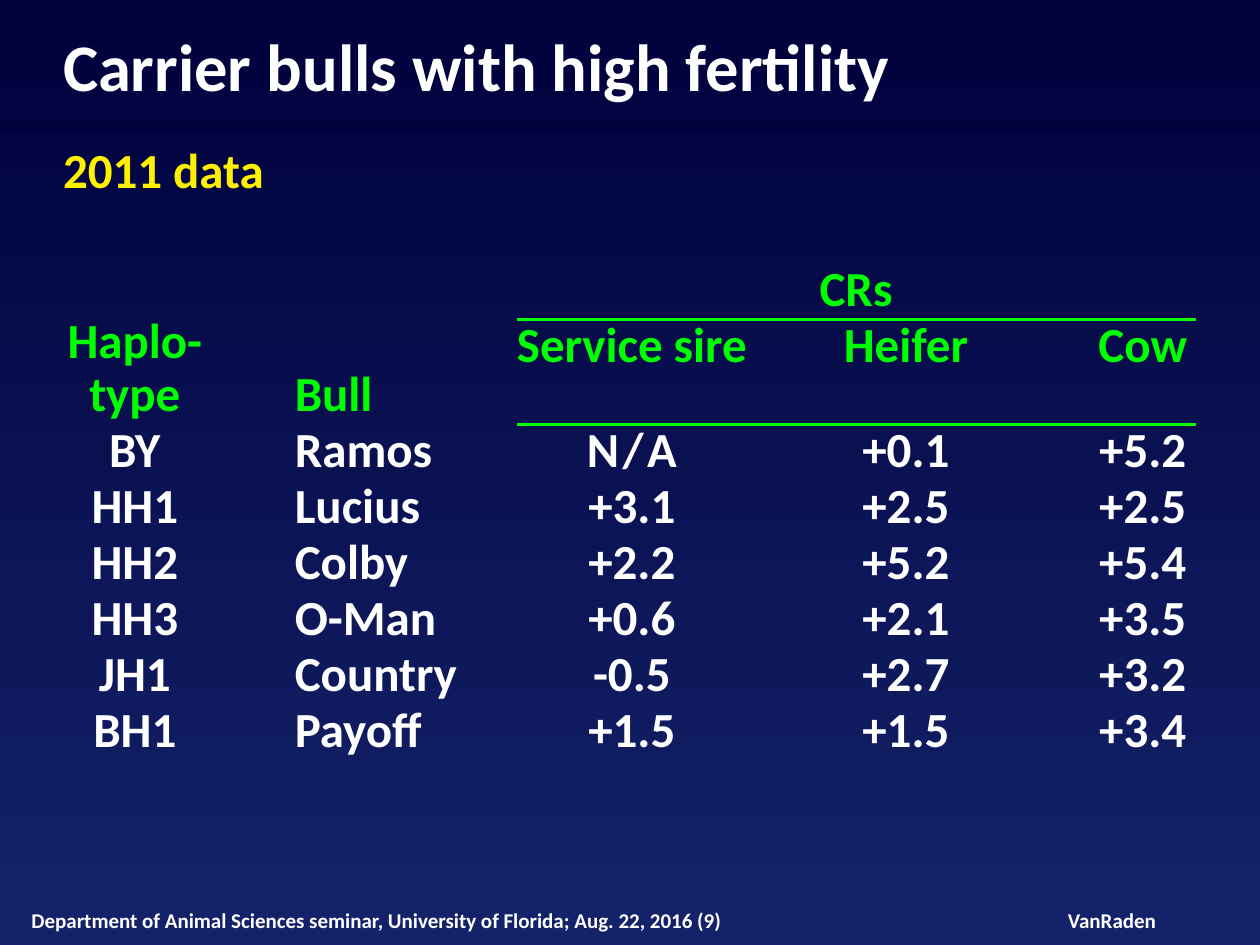
from lxml.etree import SubElement
from pptx import Presentation
from pptx.dml.color import RGBColor
from pptx.enum.text import MSO_ANCHOR, PP_ALIGN
from pptx.oxml import parse_xml
from pptx.oxml.ns import nsdecls, qn
from pptx.util import Inches, Pt

WHITE, GREEN, YELLOW, NAVY, BLUE = "FFFFFF", "00FF00", "FFF000", "00003C", "142369"
NO_GRID = "{2D5ABB26-0587-4C30-8999-92F81FD0307C}"
TITLE = [("Carrier bulls with high fertility", 38, WHITE, 0), ("2011 data", 28, YELLOW, 19.5)]
FOOTERS = [
    ("Department of Animal Sciences seminar, University of Florida; Aug. 22, 2016 (9)",
     0.25, 6.17, PP_ALIGN.LEFT, True),
    ("VanRaden", 8.47, 0.71, PP_ALIGN.CENTER, False),
]
HEADERS = [
    ["Haplo-\ntype", "Bull", "CRs", "", ""],
    ["", "", "Service sire", "Heifer", "Cow"],
]
BULLS = [
    ["BY", "Ramos", "N/A", "+0.1", "+5.2"],
    ["HH1", "Lucius", "+3.1", "+2.5", "+2.5"],
    ["HH2", "Colby", "+2.2", "+5.2", "+5.4"],
    ["HH3", "O-Man", "+0.6", "+2.1", "+3.5"],
    ["JH1", "Country", "-0.5", "+2.7", "+3.2"],
    ["BH1", "Payoff", "+1.5", "+1.5", "+3.4"],
]
COLS = [1.14, 2.46, 1.83, 2.72, 0.84]
BULL_COL, FIRST_CR, HEIFER_COL = 1, 2, 3


def rgb(color):
    """Turn a hex string into a colour."""
    return RGBColor.from_string(color)


def style(p, size, color, align=PP_ALIGN.LEFT):
    """Set the font and alignment of a paragraph."""
    p.alignment = align
    p.font.name, p.font.size, p.font.bold = "Calibri", Pt(size), True
    p.font.color.rgb = rgb(color)


def frame(tf, anchor, wrap=True):
    """Remove the insets of a text frame and anchor it."""
    tf.margin_left = tf.margin_right = tf.margin_top = tf.margin_bottom = 0
    tf.vertical_anchor, tf.word_wrap = anchor, wrap


def add_title(s):
    """Fill the title placeholder with the title and its subtitle."""
    sp = s.shapes.title
    sp.left, sp.top, sp.width, sp.height = map(Inches, (0.5, 0.2, 9, 1.38))
    tf = sp.text_frame
    frame(tf, MSO_ANCHOR.TOP)
    tf.text = "\n".join(text for text, *_ in TITLE)
    for p, (_, size, color, gap) in zip(tf.paragraphs, TITLE):
        style(p, size, color)
        p.space_before = Pt(gap)


def add_band(s):
    """Draw the dark line below the title."""
    line = s.shapes.add_connector(1, 0, Inches(1), Inches(10), Inches(1))
    line.line.color.rgb = rgb(NAVY)
    line.line.width = Pt(6.5)
    SubElement(line._element.spPr, qn("a:effectLst"))


def add_footer(s, text, left, width, align, wrap):
    """Add one footer text."""
    sp = s.shapes.add_textbox(Inches(left), Inches(7.2), Inches(width), Inches(0.2))
    frame(sp.text_frame, MSO_ANCHOR.MIDDLE, wrap)
    p = sp.text_frame.paragraphs[0]
    p.text = text
    style(p, 12, WHITE, align)


def add_rule(cell, side):
    """Draw a green border on one side of a cell."""
    cell._tc.get_or_add_tcPr().insert(0, parse_xml(
        f'<a:{side} {nsdecls("a")} w="28575"><a:solidFill>'
        f'<a:srgbClr val="{GREEN}"/></a:solidFill></a:{side}>'))


def fill_cell(cell, text, row, col):
    """Write and format one table cell."""
    header = row < len(HEADERS)
    tall = header and col < FIRST_CR
    cell.fill.background()
    cell.margin_top = cell.margin_bottom = 0
    cell.margin_left = Inches(0.7 if col == BULL_COL else 0)
    cell.margin_right = Inches(0.2 if col == HEIFER_COL and row else 0)
    cell.vertical_anchor = MSO_ANCHOR.BOTTOM if tall else MSO_ANCHOR.TOP
    cell.text = text
    for p in cell.text_frame.paragraphs:
        style(p, 28, GREEN if header else WHITE,
              PP_ALIGN.LEFT if col == BULL_COL else PP_ALIGN.CENTER)
        p.line_spacing = Pt(30 if tall else 32)
    if text == "N/A":
        p = cell.text_frame.paragraphs[0]
        p.runs[0].text = "N/"
        p.runs[0].font._element.set("spc", "200")
        p.add_run().text = "A"
    if header and not tall:
        add_rule(cell, "lnT" if row else "lnB")


def add_bulls(s):
    """Add the table of bulls and conception rates."""
    rows = HEADERS + BULLS
    table = s.shapes.add_table(len(rows), len(COLS), Inches(0.5), Inches(2.09),
                               Inches(sum(COLS)), Inches(0.44 * len(rows))).table
    table.first_row = table.horz_banding = False
    table._tbl.tblPr.find(qn("a:tableStyleId")).text = NO_GRID
    for column, width in zip(table.columns, COLS):
        column.width = Inches(width)
    for i, row in enumerate(rows):
        for j, text in enumerate(row):
            fill_cell(table.cell(i, j), text, i, j)
    for j in range(FIRST_CR):
        table.cell(0, j).merge(table.cell(1, j))
    table.cell(0, FIRST_CR).merge(table.cell(0, len(COLS) - 1))


def main():
    """Build the slide and save it."""
    prs = Presentation()
    prs.slide_width, prs.slide_height = Inches(10), Inches(7.5)
    s = prs.slides.add_slide(prs.slide_layouts[5])
    fill = s.background.fill
    fill.gradient()
    fill.gradient_angle = 270
    for stop, color, position in zip(fill.gradient_stops, (NAVY, BLUE), (0, 1)):
        stop.color.rgb, stop.position = rgb(color), position
    add_band(s)
    for footer in FOOTERS:
        add_footer(s, *footer)
    add_title(s)
    add_bulls(s)
    prs.save("out.pptx")


if __name__ == "__main__":
    main()
